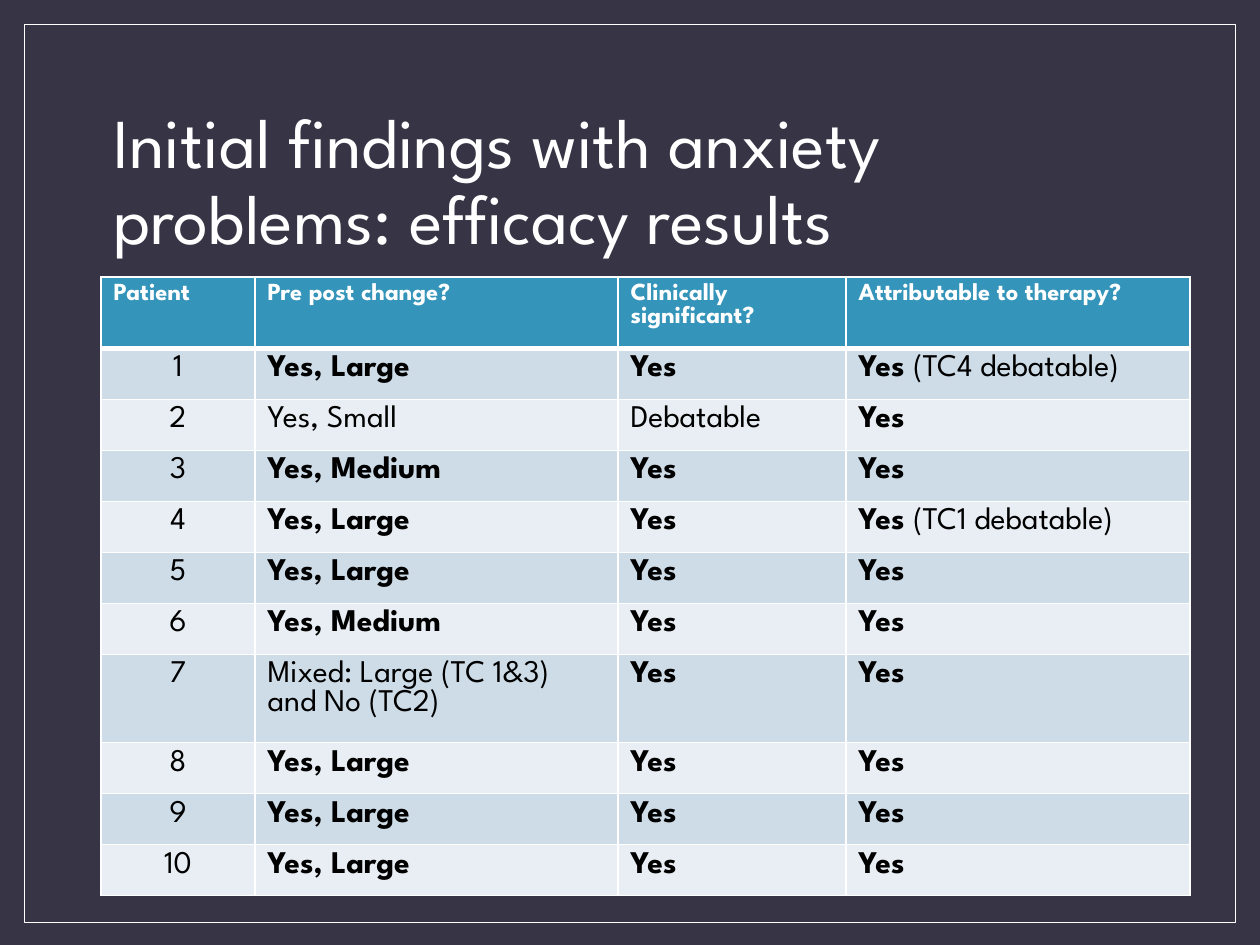
from pptx import Presentation
from pptx.util import Emu, Pt
from pptx.dml.color import RGBColor
from pptx.enum.shapes import MSO_SHAPE
from pptx.enum.text import MSO_ANCHOR, PP_ALIGN
from pptx.oxml.ns import qn
from lxml.etree import SubElement

FONT = "League Spartan"
WHITE, BLACK = "FFFFFF", "000000"
BACK, HEAD = "373545", "3494BA"
BANDS = ("CEDCE7", "E8EEF3")

COLS = (154, 363, 228, 344)
HEADS = ("Patient", "Pre post change?", "Clinically significant?",
         "Attributable to therapy?")
TALL = 7

# Each cell holds its bold part and its plain part
YES = ("Yes", "")
LARGE = ("Yes, Large", "")
MEDIUM = ("Yes, Medium", "")
RESULTS = (
    (LARGE, YES, ("Yes ", "(TC4 debatable)")),
    (("", "Yes, Small"), ("", "Debatable"), YES),
    (MEDIUM, YES, YES),
    (LARGE, YES, ("Yes ", "(TC1 debatable)")),
    (LARGE, YES, YES),
    (MEDIUM, YES, YES),
    (("", "Mixed: Large (TC 1&3) and No (TC2)"), YES, YES),
    (LARGE, YES, YES),
    (LARGE, YES, YES),
    (LARGE, YES, YES),
)


def px(n):
    return Emu(round(n * 914400 / 126))


def color(code):
    return RGBColor.from_string(code)


def style(run, size, code, bold=False):
    font = run.font
    font.name, font.size, font.bold = FONT, Pt(size), bold
    font.color.rgb = color(code)


def add_frame(slide):
    frame = slide.shapes.add_shape(
        MSO_SHAPE.RECTANGLE, px(24), px(24), px(1212), px(898))
    frame.shadow.inherit = False
    frame.fill.background()
    frame.line.color.rgb = color(WHITE)
    frame.line.width = Pt(0.5)


def add_title(slide, text):
    box = slide.shapes.add_textbox(px(101), px(88), px(1058), px(189))
    frame = box.text_frame
    frame.word_wrap = True
    frame.vertical_anchor = MSO_ANCHOR.MIDDLE
    frame.text = text
    para = frame.paragraphs[0]
    para.line_spacing = Pt(43.4)
    style(para.runs[0], 40, WHITE)


def set_edge(cell, side, width):
    props = cell._tc.get_or_add_tcPr()
    line = SubElement(props, qn("a:" + side), w=str(Pt(width)))
    fill = SubElement(line, qn("a:solidFill"))
    SubElement(fill, qn("a:srgbClr"), val=WHITE)


def fill_cell(cell, parts, size, code, back, top=1, bottom=1):
    """Write the bold and plain parts, then draw edges and fill."""
    para = cell.text_frame.paragraphs[0]
    for text, bold in zip(parts, (True, False)):
        if text:
            run = para.add_run()
            run.text = text
            style(run, size, code, bold)
    # Edges must come before the fill
    for side, width in (("lnL", 1), ("lnR", 1), ("lnT", top), ("lnB", bottom)):
        set_edge(cell, side, width)
    cell.fill.solid()
    cell.fill.fore_color.rgb = color(back)


def add_results(slide):
    heights = [58] + [71 if n == TALL else 51
                      for n in range(1, len(RESULTS) + 1)]
    table = slide.shapes.add_table(
        len(heights), len(COLS), px(101), px(277),
        px(sum(COLS)), px(sum(heights))).table
    for col, width in zip(table.columns, COLS):
        col.width = px(width)
    for row, height in zip(table.rows, heights):
        row.height = px(height)

    # Header row
    for c, text in enumerate(HEADS):
        fill_cell(table.cell(0, c), (text, ""), 14, WHITE, HEAD, bottom=3)

    # One row for each patient
    for r, result in enumerate(RESULTS, 1):
        back = BANDS[(r - 1) % 2]
        top = 3 if r == 1 else 1
        for c, parts in enumerate((("", str(r)),) + result):
            fill_cell(table.cell(r, c), parts, 18, BLACK, back, top=top)
        table.cell(r, 0).text_frame.paragraphs[0].alignment = PP_ALIGN.CENTER


def main():
    deck = Presentation()
    deck.slide_width, deck.slide_height = px(1260), px(945)
    slide = deck.slides.add_slide(deck.slide_layouts[6])
    slide.background.fill.solid()
    slide.background.fill.fore_color.rgb = color(BACK)
    add_frame(slide)
    add_title(slide, "Initial findings with anxiety problems: efficacy results")
    add_results(slide)
    deck.save("out.pptx")


if __name__ == "__main__":
    main()
